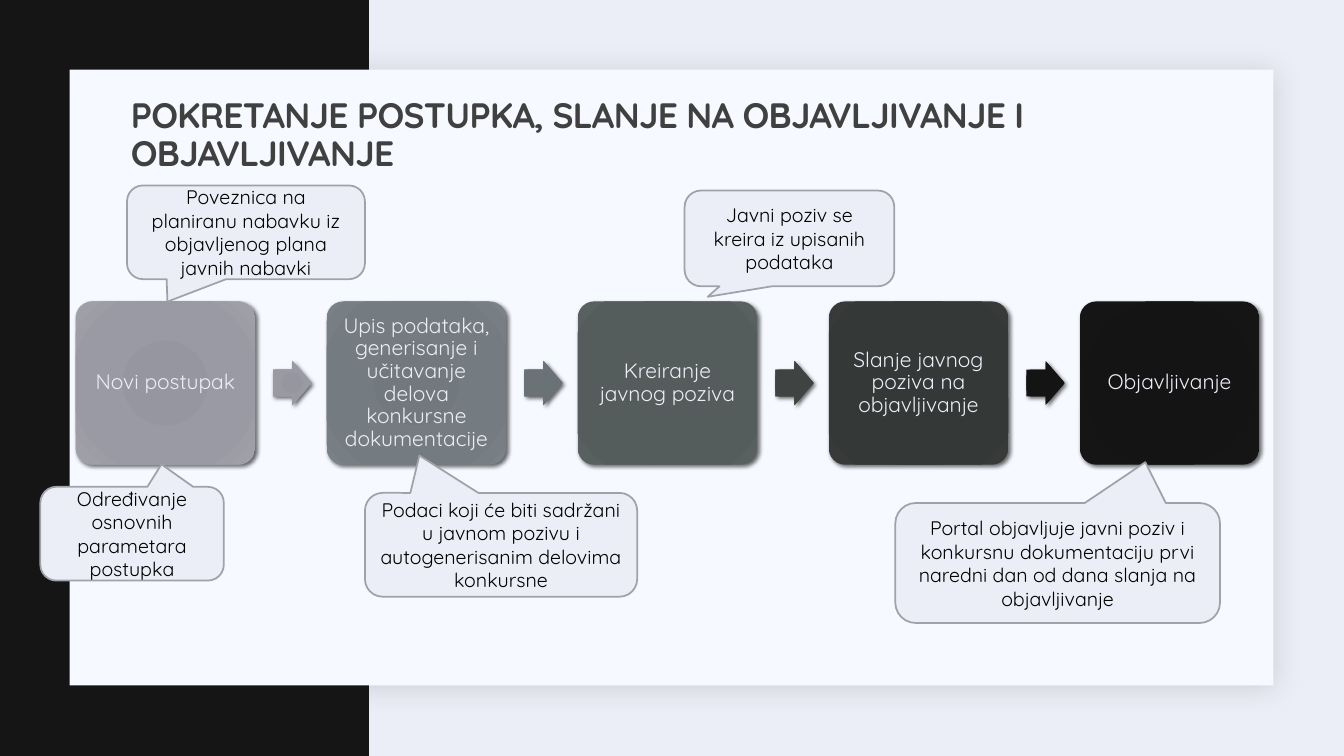
import lxml.etree
import pptx
import pptx.dml.color
import pptx.enum.shapes
import pptx.enum.text
import pptx.oxml.ns
import pptx.util

Inches = pptx.util.Inches
Pt = pptx.util.Pt
KIND = pptx.enum.shapes.MSO_SHAPE
ALIGN = pptx.enum.text.PP_ALIGN
ANCHOR = pptx.enum.text.MSO_ANCHOR
qn = pptx.oxml.ns.qn

FONT = "Quicksand"
DARK, PALE, PANEL, EDGE = "141514", "ECEEF7", "F6F9FF", "A1A2A9"
STOPS = (0, 70, 100)

# Step text, card shades, shades of the arrow that follows
GREY = ("95969F", "999AA3", "A1A2A9")
BLACK = ("131413", "131413", "141514")
STEPS = [
    ("Novi postupak", GREY, GREY),
    ("Upis podataka, generisanje i učitavanje delova konkursne dokumentacije",
     ("72797E", "757C81", "7B8286"), ("687072", "6A7275", "70777A")),
    ("Kreiranje javnog poziva",
     ("535A5A", "555D5C", "596060"), ("3D4341", "3F4442", "424745")),
    ("Slanje javnog poziva na objavljivanje",
     ("333735", "343836", "373A39"), BLACK),
    ("Objavljivanje", BLACK, None),
]

# Box, tip of the pointer, text
NOTES = [
    ((0.4, 4.83, 1.82, 0.93), (0.16, -0.74),
     "Određivanje osnovnih parametara postupka"),
    ((1.26, 1.84, 2.36, 0.93), (-0.33, 0.74),
     "Poveznica na planiranu nabavku iz objavljenog plana javnih nabavki"),
    ((3.62, 4.89, 2.7, 1.03), (-0.3, -0.86),
     "Podaci koji će biti sadržani u javnom pozivu i autogenerisanim "
     "delovima konkursne"),
    ((6.79, 1.89, 2.08, 0.95), (-0.39, 0.61),
     "Javni poziv se kreira iz upisanih podataka"),
    ((8.88, 4.99, 3.22, 1.19), (0.27, -0.84),
     "Portal objavljuje javni poziv i konkursnu dokumentaciju prvi naredni "
     "dan od dana slanja na objavljivanje"),
]


def color(code):
    return pptx.dml.color.RGBColor.from_string(code)


def add_node(parent, tag, **attrs):
    node = lxml.etree.SubElement(parent, qn(tag))
    for key, value in attrs.items():
        node.set(key, str(value))
    return node


def add_shape(slide, kind, box, fill=None, adjust=()):
    shape = slide.shapes.add_shape(kind, *map(Inches, box))
    shape.shadow.inherit = False
    shape.line.fill.background()
    if fill:
        shape.fill.solid()
        shape.fill.fore_color.rgb = color(fill)
    for index, value in enumerate(adjust):
        shape.adjustments[index] = value
    return shape


def add_shadow(shape, shade, alpha, blur):
    effects = shape._element.spPr.find(qn("a:effectLst"))
    outer = add_node(effects, "a:outerShdw", blurRad=Pt(blur), dist=Pt(2),
                     dir=45 * 60000, algn="tl", rotWithShape=0)
    tone = add_node(outer, "a:srgbClr", val=shade)
    add_node(tone, "a:alpha", val=alpha * 1000)


def add_glow(shape, shades):
    """Fill the shape with a radial gradient."""
    props = shape._element.spPr
    grad = add_node(props, "a:gradFill", rotWithShape=1)
    stops = add_node(grad, "a:gsLst")
    for place, shade in zip(STOPS, shades):
        stop = add_node(stops, "a:gs", pos=place * 1000)
        add_node(stop, "a:srgbClr", val=shade)
    circle = add_node(grad, "a:path", path="circle")
    add_node(circle, "a:fillToRect", l=100000, t=100000, r=100000, b=100000)
    props.find(qn("a:prstGeom")).addnext(grad)


def set_text(shape, text, size, shade, align=ALIGN.CENTER, space=1.0):
    frame = shape.text_frame
    frame.text = text
    frame.word_wrap = True
    frame.vertical_anchor = ANCHOR.MIDDLE
    para = frame.paragraphs[0]
    para.alignment = align
    para.line_spacing = space
    run = para.runs[0]
    run.font.name = FONT
    run.font.size = Pt(size)
    run.font.color.rgb = color(shade)
    return run


def add_title(slide, text):
    box = slide.shapes.add_textbox(*map(Inches, (1.2, 1.03, 11, 0.64)))
    run = set_text(box, text, 25.2, "404040", ALIGN.LEFT, 0.9)
    run.font.bold = True
    run._r.get_or_add_rPr().set("spc", "-50")


def add_block(slide, kind, box, shades, adjust):
    """Add a gradient shape with a close, dark shadow."""
    block = add_shape(slide, kind, box, adjust=adjust)
    add_glow(block, shades)
    add_shadow(block, "000000", 60, 3)
    return block


def add_step(slide, left, text, shades, next_shades):
    card = add_block(slide, KIND.ROUNDED_RECTANGLE, (left, 2.99, 1.78, 1.62),
                     shades, [0.1])
    frame = card.text_frame
    frame.margin_left = frame.margin_right = Inches(0.1)
    frame.margin_top = frame.margin_bottom = Inches(0.1)
    set_text(card, text, 15, PALE, space=0.9)
    if next_shades:
        add_block(slide, KIND.RIGHT_ARROW, (left + 1.96, 3.58, 0.38, 0.44),
                  next_shades, [0.6, 0.5])


def add_note(slide, box, tip, text):
    note = add_shape(slide, KIND.ROUNDED_RECTANGULAR_CALLOUT, box, PALE,
                     [*tip, 0.17])
    note.line.color.rgb = color(EDGE)
    note.line.width = Pt(1.25)
    set_text(note, text, 14, "000000")


def main():
    deck = pptx.Presentation()
    deck.slide_width, deck.slide_height = Inches(13.33), Inches(7.5)
    slide = deck.slides.add_slide(deck.slide_layouts[6])
    slide.background.fill.solid()
    slide.background.fill.fore_color.rgb = color(PALE)

    add_shape(slide, KIND.RECTANGLE, (0, 0, 3.66, 7.5), DARK)
    panel = add_shape(slide, KIND.RECTANGLE, (0.69, 0.69, 11.94, 6.11), PANEL)
    add_shadow(panel, "1F2125", 15, 20)
    add_title(slide, "POKRETANJE POSTUPKA, SLANJE NA OBJAVLJIVANJE I "
                     "OBJAVLJIVANJE")
    for index, step in enumerate(STEPS):
        add_step(slide, 0.75 + 2.49 * index, *step)
    for note in NOTES:
        add_note(slide, *note)
    deck.save("out.pptx")


if __name__ == "__main__":
    main()
